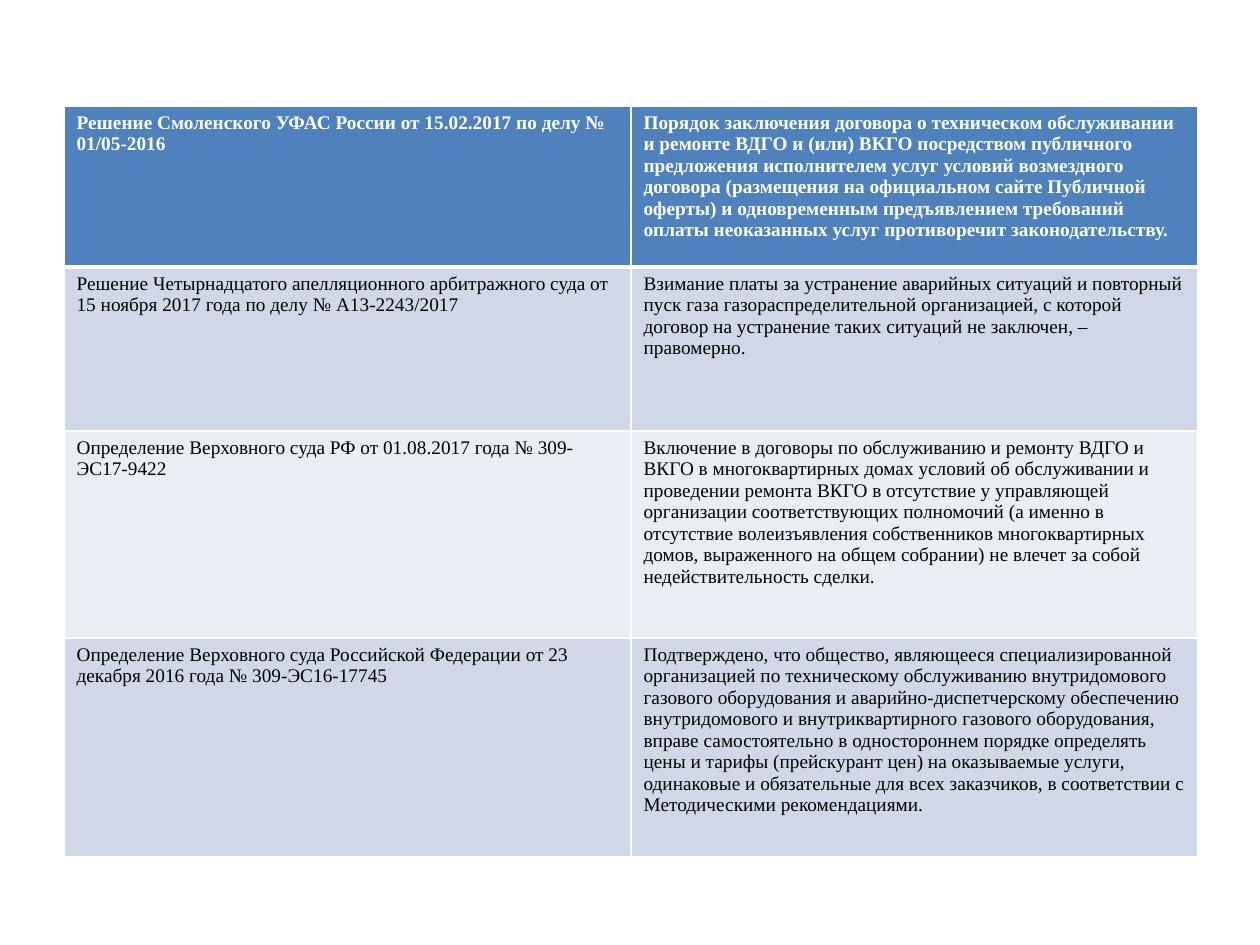
import pptx
import pptx.dml.color
import pptx.oxml.ns
import pptx.util
from lxml import etree

PX_PER_INCH = 126
FONT = "Times New Roman"


def px(length):
    return pptx.util.Emu(round(length * 914400 / PX_PER_INCH))


def color(hex_code):
    return pptx.dml.color.RGBColor.from_string(hex_code)


def write(cell, text, size=11, ink="000000", bold=False):
    para = cell.text_frame.paragraphs[0]
    span = para.add_run()
    span.text = text
    span.font.name = FONT
    span.font.size = pptx.util.Pt(size)
    span.font.bold = bold
    span.font.color.rgb = color(ink)


def set_borders(cell, widths, ink="FFFFFF"):
    properties = cell._tc.get_or_add_tcPr()
    qn = pptx.oxml.ns.qn
    for position, (side, width) in enumerate(widths.items()):
        line = etree.Element(qn("a:" + side), w=str(pptx.util.Pt(width)))
        fill = etree.SubElement(line, qn("a:solidFill"))
        etree.SubElement(fill, qn("a:srgbClr"), val=ink)
        properties.insert(position, line)


# Court and regulator decisions with their conclusions
DECISIONS = [
    ("Решение Смоленского УФАС России от 15.02.2017 по делу № 01/05-2016",
     "Порядок заключения договора о техническом обслуживании и ремонте ВДГО "
     "и (или) ВКГО посредством публичного предложения исполнителем услуг "
     "условий возмездного договора (размещения на официальном сайте "
     "Публичной оферты) и одновременным предъявлением требований оплаты "
     "неоказанных услуг противоречит законодательству."),
    ("Решение Четырнадцатого апелляционного арбитражного суда от "
     "15 ноября 2017 года по делу № А13-2243/2017",
     "Взимание платы за устранение аварийных ситуаций и повторный пуск газа "
     "газораспределительной организацией, с которой договор на устранение "
     "таких ситуаций не заключен, – правомерно."),
    ("Определение Верховного суда РФ от 01.08.2017 года № 309-ЭС17-9422",
     "Включение в договоры по обслуживанию и ремонту ВДГО и ВКГО в "
     "многоквартирных домах условий об обслуживании и проведении ремонта "
     "ВКГО в отсутствие у управляющей организации соответствующих полномочий "
     "(а именно в отсутствие волеизъявления собственников многоквартирных "
     "домов, выраженного на общем собрании) не влечет за собой "
     "недействительность сделки."),
    ("Определение Верховного суда Российской Федерации от 23 декабря "
     "2016 года № 309-ЭС16-17745",
     "Подтверждено, что общество, являющееся специализированной организацией "
     "по техническому обслуживанию внутридомового газового оборудования и "
     "аварийно-диспетчерскому обеспечению внутридомового и внутриквартирного "
     "газового оборудования, вправе самостоятельно в одностороннем порядке "
     "определять цены и тарифы (прейскурант цен) на оказываемые услуги, "
     "одинаковые и обязательные для всех заказчиков, в соответствии с "
     "Методическими рекомендациями."),
]
ROW_HEIGHTS = [161, 164, 207, 219]
COLUMN_WIDTH = 567

# Slide
deck = pptx.Presentation()
deck.slide_width, deck.slide_height = px(1260), px(945)
page = deck.slides.add_slide(deck.slide_layouts[6])

# Table
table = page.shapes.add_table(
    len(DECISIONS), 2, px(64), px(106),
    px(2 * COLUMN_WIDTH), px(sum(ROW_HEIGHTS))).table
for column in table.columns:
    column.width = px(COLUMN_WIDTH)

# Header row, then banded rows
for index, (texts, height) in enumerate(zip(DECISIONS, ROW_HEIGHTS)):
    header = index == 0
    table.rows[index].height = px(height)
    for cell, text in zip(table.rows[index].cells, texts):
        cell.fill.solid()
        cell.fill.fore_color.rgb = color(
            "4F81BD" if header else "D0D8E8" if index % 2 else "E9EDF4")
        set_borders(cell, {"lnL": 1, "lnR": 1, "lnT": 3 if index == 1 else 1,
                           "lnB": 3 if header else 1})
        write(cell, text, ink="FFFFFF" if header else "000000", bold=header)

deck.save("out.pptx")
